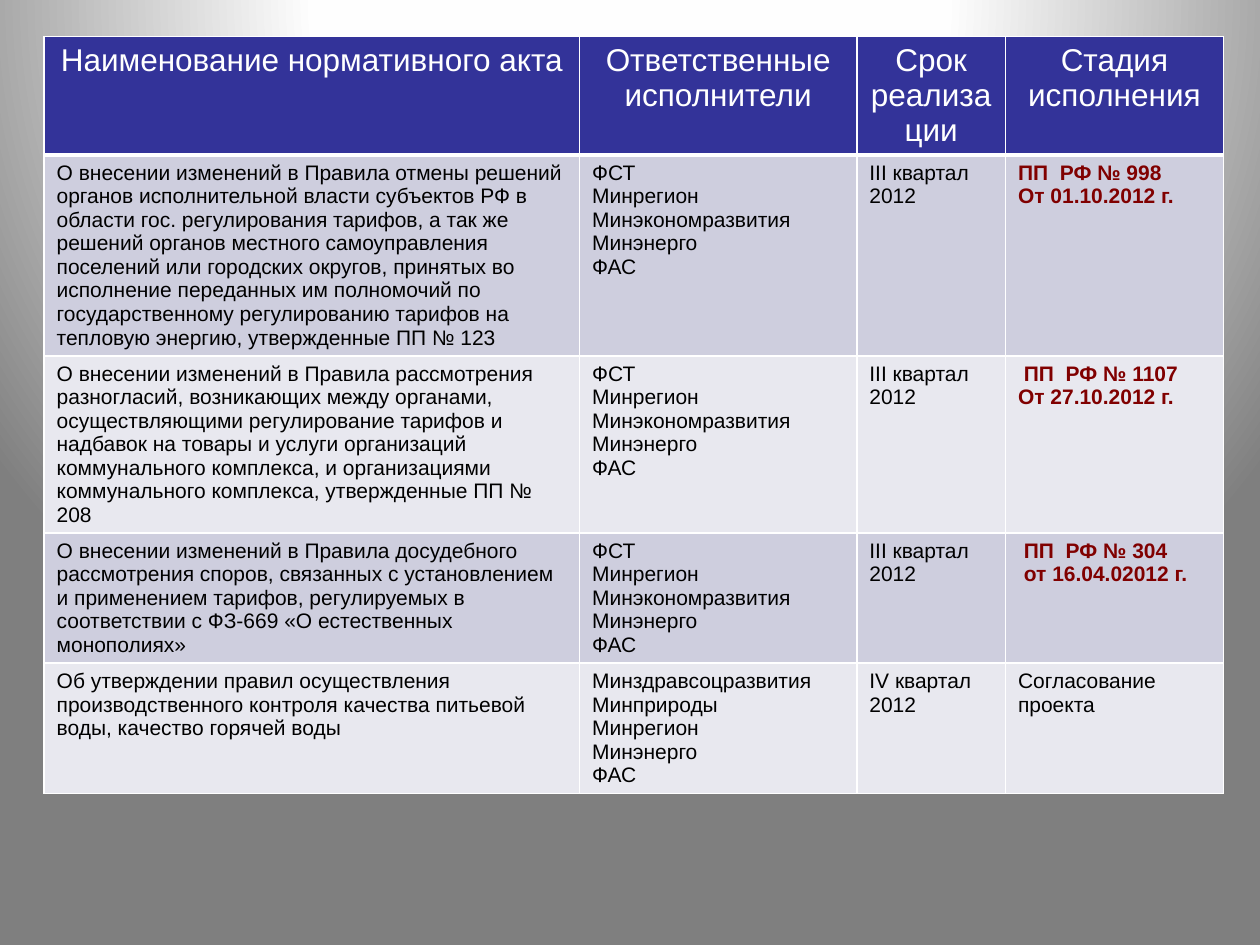
import pptx
import pptx.dml.color
import pptx.enum.text
import pptx.oxml
import pptx.oxml.ns
import pptx.util

Inches = pptx.util.Inches
Color = pptx.dml.color.RGBColor
Align = pptx.enum.text.PP_ALIGN

WHITE = Color(0xFF, 0xFF, 0xFF)
BLACK = Color(0, 0, 0)
NAVY = Color(0x33, 0x33, 0x99)
LILAC = Color(0xCE, 0xCE, 0xDE)
PALE = Color(0xE8, 0xE8, 0xEF)
MAROON = Color(0x80, 0, 0)
STOPS = [(0, WHITE), (40, Color(0xFE, 0xFE, 0xFE)), (100, Color(0x7F, 0x7F, 0x7F))]

WIDTHS = [4.25, 2.2, 1.18, 1.73]
HEIGHTS = [0.79] + [0.85] * 4
HEADS = ["Наименование нормативного акта", "Ответственные исполнители",
         "Срок реализации", "Стадия исполнения"]
BODIES = "ФСТ\nМинрегион\nМинэкономразвития\nМинэнерго\nФАС"
ACTS = [
    ["О внесении изменений в Правила отмены решений органов исполнительной власти "
     "субъектов РФ в области гос. регулирования тарифов, а так же решений органов "
     "местного самоуправления поселений или городских округов, принятых во исполнение "
     "переданных им полномочий по государственному регулированию тарифов на тепловую "
     "энергию, утвержденные ПП № 123",
     BODIES, "III квартал 2012", "ПП  РФ № 998\nОт 01.10.2012 г."],
    ["О внесении изменений в Правила рассмотрения разногласий, возникающих между "
     "органами, осуществляющими регулирование тарифов и надбавок на товары и услуги "
     "организаций коммунального комплекса, и организациями коммунального комплекса, "
     "утвержденные ПП № 208",
     BODIES, "III квартал 2012", " ПП  РФ № 1107\nОт 27.10.2012 г."],
    ["О внесении изменений в Правила досудебного рассмотрения споров, связанных с "
     "установлением и применением тарифов, регулируемых в соответствии с ФЗ-669 "
     "«О естественных монополиях»",
     BODIES, "III квартал 2012", " ПП  РФ № 304\n от 16.04.02012 г."],
    ["Об утверждении правил осуществления производственного контроля качества "
     "питьевой воды, качество горячей воды",
     "Минздравсоцразвития\nМинприроды\nМинрегион\nМинэнерго\nФАС",
     "IV квартал 2012", "Согласование\nпроекта"],
]


def write(frame, text, size=12, color=BLACK, bold=False, align=Align.LEFT, font="Arial"):
    frame.text = text
    for para in frame.paragraphs:
        para.alignment = align
        for run in para.runs:
            run.font.name = font
            run.font.size = pptx.util.Pt(size)
            run.font.bold = bold
            run.font.color.rgb = color


class Deck:
    head = dict(size=18, color=WHITE, align=Align.CENTER)
    done = dict(color=MAROON, bold=True)
    bands = [LILAC, PALE]

    def __init__(self):
        self.file = pptx.Presentation()
        self.file.slide_width = Inches(10)
        self.file.slide_height = Inches(7.5)
        self.slide = self.file.slides.add_slide(self.file.slide_layouts[6])

    def back(self, stops):
        fill = self.slide.background.fill
        fill.gradient()
        old = self.slide.element.xpath(".//p:bgPr/a:gradFill")[0]
        marks = "".join(f'<a:gs pos="{pos * 1000}"><a:srgbClr val="{color}"/></a:gs>'
                        for pos, color in stops)
        new = pptx.oxml.parse_xml(
            f'<a:gradFill {pptx.oxml.ns.nsdecls("a")} rotWithShape="1">'
            f'<a:gsLst>{marks}</a:gsLst><a:path path="circle">'
            '<a:fillToRect l="50000" t="-80000" r="50000" b="180000"/>'
            '</a:path></a:gradFill>')
        old.getparent().replace(old, new)

    def edge(self, cell, base):
        props = cell._tc.get_or_add_tcPr()
        for spot, side in enumerate("LRTB"):
            width = pptx.util.Pt(base if side == "B" else 1)
            props.insert(spot, pptx.oxml.parse_xml(
                f'<a:ln{side} {pptx.oxml.ns.nsdecls("a")} w="{width}"><a:solidFill>'
                f'<a:srgbClr val="{WHITE}"/></a:solidFill></a:ln{side}>'))

    def cell(self, cell, text, fill, base=1, **style):
        write(cell.text_frame, text, **style)
        cell.fill.solid()
        cell.fill.fore_color.rgb = fill
        self.edge(cell, base)

    def table(self, left, top, heads, acts):
        shape = self.slide.shapes.add_table(
            len(HEIGHTS), len(WIDTHS), Inches(left), Inches(top),
            Inches(sum(WIDTHS)), Inches(sum(HEIGHTS)))
        grid = shape.table
        for col, width in zip(grid.columns, WIDTHS):
            col.width = Inches(width)
        for row, height in zip(grid.rows, HEIGHTS):
            row.height = Inches(height)
        for col, text in enumerate(heads):
            self.cell(grid.cell(0, col), text, NAVY, base=3, **self.head)
        for row, act in enumerate(acts, 1):
            for col, text in enumerate(act):
                style = self.done if col == 3 and "№" in text else {}
                self.cell(grid.cell(row, col), text, self.bands[(row - 1) % 2], **style)


def main():
    deck = Deck()
    deck.back(STOPS)
    deck.table(0.35, 0.29, HEADS, ACTS)
    deck.file.save("out.pptx")


if __name__ == "__main__":
    main()
